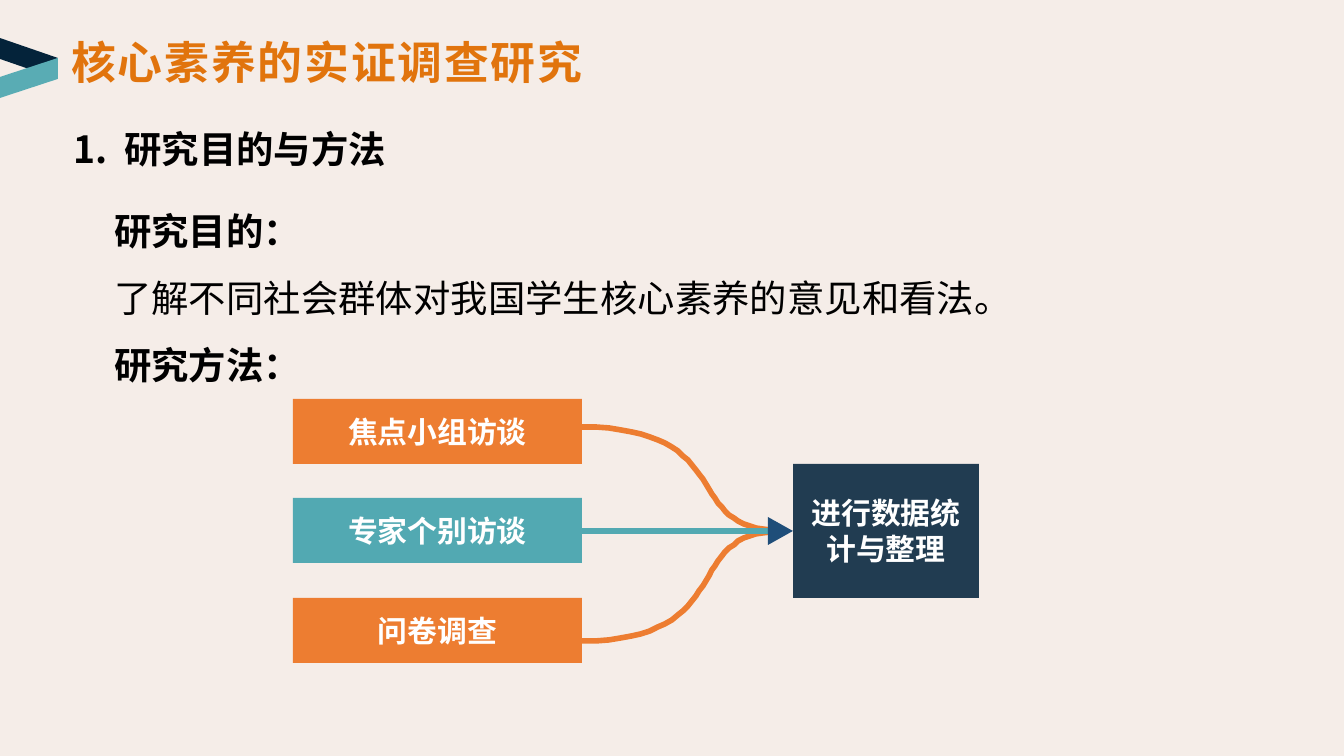
from lxml.etree import SubElement
from pptx import Presentation
from pptx.dml.color import RGBColor
from pptx.enum.shapes import MSO_CONNECTOR as CONNECTOR, MSO_SHAPE as SHAPE
from pptx.enum.text import MSO_ANCHOR as ANCHOR, MSO_AUTO_SIZE as AUTO_SIZE, PP_ALIGN as ALIGN
from pptx.oxml.ns import qn
from pptx.util import Emu, Pt

PX = 914400 / 134.4
CJK = "Noto Sans CJK SC"
ORANGE, TEAL, NAVY = "ED7D31", "52A9B2", "213C51"


def px(length):
    return Emu(round(length * PX))


def color(hex_value):
    return RGBColor.from_string(hex_value)


def bezier(start, control1, control2, end, steps=32):
    """Points along a cubic curve, both ends included."""
    points = []
    for step in range(steps + 1):
        t = step / steps
        weights = ((1 - t) ** 3, 3 * t * (1 - t) ** 2, 3 * t ** 2 * (1 - t), t ** 3)
        points.append(tuple(
            sum(w * c for w, c in zip(weights, axis))
            for axis in zip(start, control1, control2, end)))
    return points


class SlideBuilder:
    """Holds the style and the slide being filled."""

    line_width = Pt(3)

    def __init__(self, slide, background):
        self.slide = slide
        self.shapes = slide.shapes
        fill = slide.background.fill
        fill.solid()
        fill.fore_color.rgb = color(background)

    def style_run(self, run, size, ink, bold=True, font=CJK, spacing=0):
        run.font.size, run.font.bold, run.font.name = Pt(size), bold, font
        run.font.color.rgb = color(ink)
        properties = run._r.get_or_add_rPr()
        SubElement(properties, qn("a:ea"), typeface=CJK)
        if spacing:
            properties.set("spc", str(round(spacing * 100)))

    def text(self, box, paragraphs, size=20, ink="000000", font=CJK,
             line_spacing=None, anchor=ANCHOR.TOP, wrap=True, grow=False):
        """Each paragraph is a list of (text, bold, letter spacing in points)."""
        frame = self.shapes.add_textbox(*map(px, box)).text_frame
        frame.word_wrap = wrap
        frame.vertical_anchor = anchor
        frame.auto_size = AUTO_SIZE.SHAPE_TO_FIT_TEXT if grow else AUTO_SIZE.NONE
        for index, pieces in enumerate(paragraphs):
            paragraph = frame.add_paragraph() if index else frame.paragraphs[0]
            paragraph.line_spacing = line_spacing
            for words, bold, spacing in pieces:
                run = paragraph.add_run()
                run.text = words
                self.style_run(run, size, ink, bold, font, spacing)

    def block(self, box, words, fill, inset=0):
        shape = self.shapes.add_shape(SHAPE.RECTANGLE, *map(px, box))
        self.paint(shape, fill)
        frame = shape.text_frame
        frame.word_wrap = True
        frame.vertical_anchor = ANCHOR.MIDDLE
        frame.margin_left = frame.margin_right = px(inset)
        frame.margin_top = frame.margin_bottom = px(inset // 2)
        frame.text = words
        paragraph = frame.paragraphs[0]
        paragraph.alignment = ALIGN.CENTER
        self.style_run(paragraph.runs[0], 16, "FFFFFF")

    def paint(self, shape, fill):
        shape.shadow.inherit = False
        shape.fill.solid()
        shape.fill.fore_color.rgb = color(fill)
        shape.line.fill.background()

    def outline(self, points, close):
        start, *rest = points
        builder = self.shapes.build_freeform(*start, scale=PX)
        builder.add_line_segments(rest, close=close)
        return builder.convert_to_shape()

    def polygon(self, points, fill):
        self.paint(self.outline(points, True), fill)

    def curve(self, points, ink):
        shape = self.outline(bezier(*points), False)
        shape.shadow.inherit = False
        shape.fill.background()
        self.stroke(shape, ink)

    def straight(self, start, end, ink):
        line = self.shapes.add_connector(CONNECTOR.STRAIGHT, *map(px, start + end))
        self.stroke(line, ink)
        SubElement(line._element.spPr, qn("a:effectLst"))

    def stroke(self, shape, ink):
        shape.line.color.rgb = color(ink)
        shape.line.width = self.line_width


def main():
    deck = Presentation()
    deck.slide_width, deck.slide_height = px(1344), px(756)
    page = SlideBuilder(deck.slides.add_slide(deck.slide_layouts[6]), "F5EDE8")

    # Heading, ribbon and explanation
    page.text((60, 113, 564, 71),
              [[("1.", True, 0), (" ", True, 4.5), ("研究目的与方法", True, 0)]],
              anchor=ANCHOR.MIDDLE)
    page.text((101, 179, 895, 218),
              [[("研究目的：", True, 0)],
               [("了解不同社会群体对我国学生核心素养的意见和看法。", False, 0)],
               [("研究方法：", True, 0)]],
              line_spacing=1.5, grow=True)
    page.polygon([(58, 79), (58, 58), (0, 38), (0, 59)], "04233A")
    page.polygon([(58, 58), (58, 79), (0, 98), (0, 77)], "59ACB4")
    page.text((58, 28, 546, 67), [[("核心素养的实证调查研究", True, 1)]],
              size=24, ink="E1740D", font="Arial", wrap=False, grow=True)

    # Three methods lead into one analysis step
    left, width, height = 293, 289, 65
    right, middle = left + width, 531
    page.block((793, 464, 186, 134), "进行数据统计与整理", NAVY, inset=13)
    for source_y, end_y in ((427, middle - 1), (641, middle + 1)):
        page.curve([(right, source_y), (739, source_y),
                    (681, 2 * middle - end_y), (780, end_y)], ORANGE)
    methods = (("焦点小组访谈", ORANGE), ("专家个别访谈", TEAL), ("问卷调查", ORANGE))
    for row, (method, fill) in enumerate(methods):
        top = 399 + row * 199 // 2
        page.block((left, top, width, height), method, fill)
    page.straight((right, middle), (769, middle), TEAL)
    page.polygon([(768, middle - 14), (793, middle), (768, middle + 14)], "1F4E79")

    deck.save("out.pptx")


if __name__ == "__main__":
    main()
